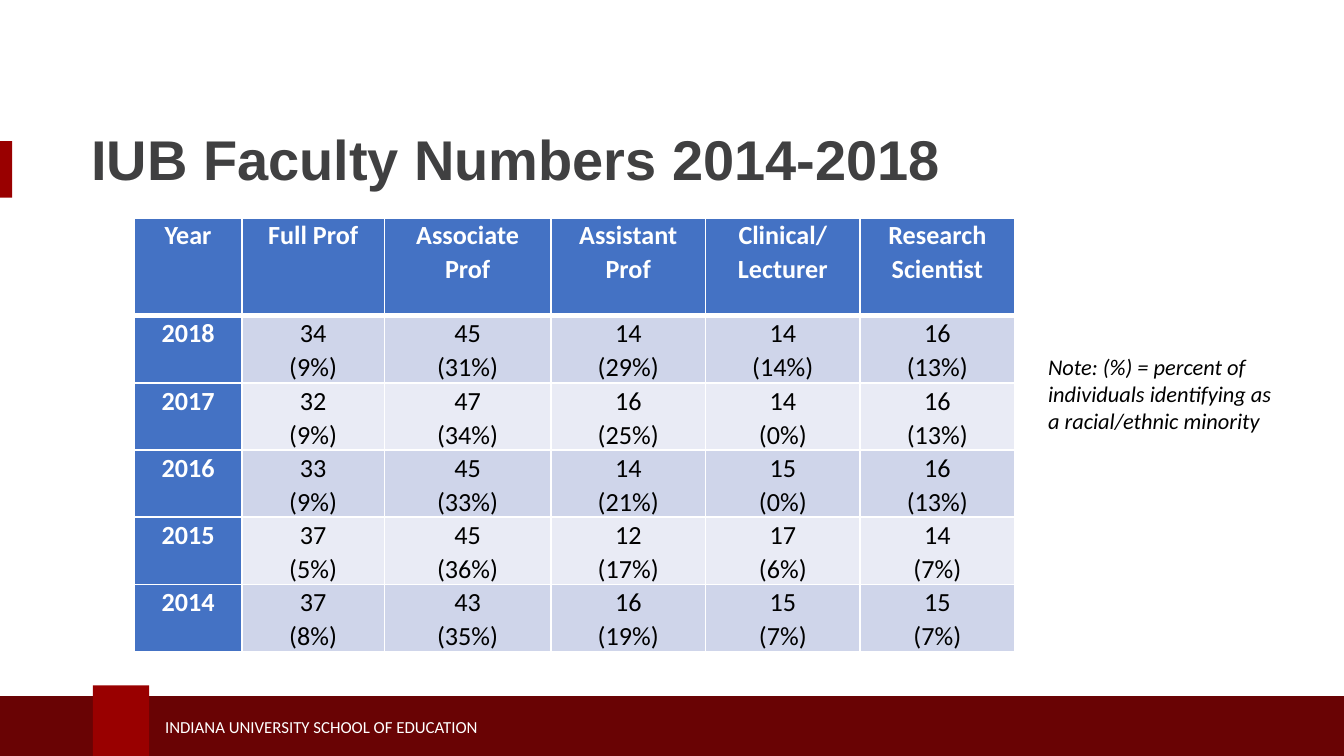
from lxml import etree
from pptx import Presentation, util as u
from pptx.dml.color import RGBColor
from pptx.enum import shapes, text
from pptx.oxml.ns import qn

WHITE = RGBColor(0xFF, 0xFF, 0xFF)
BLACK = RGBColor(0, 0, 0)
CRIMSON = RGBColor(0x99, 0x00, 0x00)
MAROON = RGBColor(0x69, 0x03, 0x04)
GRAY = RGBColor(0x40, 0x40, 0x41)
BLUE = RGBColor(0x44, 0x72, 0xC4)
BANDS = [RGBColor(0xCF, 0xD5, 0xEA), RGBColor(0xE9, 0xEB, 0xF5)]

WIDTH = u.Inches(10)
HEIGHT = WIDTH * 9 // 16
UNIT = WIDTH / 100

TITLE = dict(name="Arial", size=u.Pt(30), bold=True)
FOOTER = dict(name="Calibri", size=u.Pt(9))
NOTE = dict(name="Calibri", size=u.Pt(12), italic=True)
HEAD = dict(name="Calibri", size=u.Pt(14), bold=True)
BODY = dict(name="Calibri", size=u.Pt(14), bold=False)

COLUMNS = [8, 10.6, 12.4, 11.5, 11.5, 11.5]
ROWS = [7.3] + [4.9] * 5
HEADINGS = ["Year", "Full Prof", "Associate Prof", "Assistant Prof",
            "Clinical/ Lecturer", "Research Scientist"]
FACULTY = {
    "2018": ["34 (9%)", "45 (31%)", "14 (29%)", "14 (14%)", "16 (13%)"],
    "2017": ["32 (9%)", "47 (34%)", "16 (25%)", "14 (0%)", "16 (13%)"],
    "2016": ["33 (9%)", "45 (33%)", "14 (21%)", "15 (0%)", "16 (13%)"],
    "2015": ["37 (5%)", "45 (36%)", "12 (17%)", "17 (6%)", "14 (7%)"],
    "2014": ["37 (8%)", "43 (35%)", "16 (19%)", "15 (7%)", "15 (7%)"],
}


def grid(*cells):
    """Turn grid units into slide lengths."""
    return [u.Emu(round(c * UNIT)) for c in cells]


def write(tf, lines, style, color, **layout):
    """Fill a text frame with one formatted paragraph per line."""
    for i, line in enumerate(lines):
        p = tf.paragraphs[0] if i == 0 else tf.add_paragraph()
        for key, value in layout.items():
            setattr(p, key, value)
        r = p.add_run()
        r.text = line
        for key, value in style.items():
            setattr(r.font, key, value)
        r.font.color.rgb = color


def add_block(s, box, color):
    """Add a plain filled rectangle."""
    sp = s.shapes.add_shape(shapes.MSO_SHAPE.RECTANGLE, *grid(*box))
    sp.shadow.inherit = False
    sp.fill.solid()
    sp.fill.fore_color.rgb = color
    sp.line.fill.background()


def add_text(s, box, lines, style, color, anchor, **layout):
    """Add a wrapping text box."""
    tf = s.shapes.add_textbox(*grid(*box)).text_frame
    tf.word_wrap = True
    tf.vertical_anchor = anchor
    write(tf, lines, style, color, **layout)


def add_footer(s, x, y, w, h):
    """Place the footer band with its tab and school name."""
    add_block(s, (x, y + 0.8, w, h - 0.8), MAROON)
    add_block(s, (x + 7.2, y, 4.2, h), CRIMSON)
    add_text(s, (x + 11.6, y + 1.8, 39.5, 2.5),
             ["INDIANA UNIVERSITY SCHOOL OF EDUCATION"], FOOTER, WHITE,
             text.MSO_ANCHOR.MIDDLE)


def add_title(s, x, y, w, h):
    """Place the slide title and the accent at the slide edge."""
    add_block(s, (0, y + 2.2, 0.9, 4.2), CRIMSON)
    add_text(s, (x, y, w, h), ["IUB Faculty Numbers 2014-2018"], TITLE, GRAY,
             text.MSO_ANCHOR.MIDDLE, line_spacing=0.9)


def set_borders(cell, **widths):
    """Draw white cell borders of the given point widths."""
    tc_pr = cell._tc.get_or_add_tcPr()
    for i, (side, width) in enumerate(widths.items()):
        ln = etree.Element(qn(f"a:ln{side}"), w=str(u.Pt(width)))
        fill = etree.SubElement(ln, qn("a:solidFill"))
        etree.SubElement(fill, qn("a:srgbClr"), val=str(WHITE))
        tc_pr.insert(i, ln)


def fill_cell(cell, lines, style, color, fill):
    """Write and colour one table cell."""
    margins = dict(margin_left=0.09, margin_right=0.09, margin_top=0, margin_bottom=0)
    for key, value in margins.items():
        setattr(cell, key, u.Inches(value))
    cell.fill.solid()
    cell.fill.fore_color.rgb = fill
    write(cell.text_frame, lines, style, color,
          alignment=text.PP_ALIGN.CENTER, line_spacing=1.07)


def add_faculty_table(s, x, y):
    """Place the table of faculty counts by year and rank."""
    box = grid(x, y, sum(COLUMNS), sum(ROWS))
    table = s.shapes.add_table(len(ROWS), len(COLUMNS), *box).table
    table.first_col = True
    for column, width in zip(table.columns, grid(*COLUMNS)):
        column.width = width
    for row, height in zip(table.rows, grid(*ROWS)):
        row.height = height
    records = [HEADINGS] + [[year, *counts] for year, counts in FACULTY.items()]
    for i, record in enumerate(records):
        for j, value in enumerate(record):
            cell = table.cell(i, j)
            if i == 0 or j == 0:
                fill_cell(cell, [value], HEAD, WHITE, BLUE)
            else:
                fill_cell(cell, value.split(), BODY, BLACK, BANDS[(i - 1) % 2])
            set_borders(cell, L=1, R=1, T=3 if i == 1 else 1, B=3 if i == 0 else 1)


def add_note(s, x, y, w, h):
    """Place the note beside the table."""
    add_text(s, (x, y, w, h),
             ["Note: (%) = percent of", "individuals identifying as",
              "a racial/ethnic minority"], NOTE, BLACK, text.MSO_ANCHOR.TOP)


def main():
    """Build and save the slide."""
    prs = Presentation()
    prs.slide_width, prs.slide_height = WIDTH, HEIGHT
    s = prs.slides.add_slide(prs.slide_layouts[6])
    add_footer(s, -0.3, 51, 100.9, 5.8)
    add_title(s, 5.8, 8.3, 87.5, 7.6)
    add_faculty_table(s, 10, 16.2)
    add_note(s, 77, 25.8, 22, 10.1)
    prs.save("out.pptx")


if __name__ == "__main__":
    main()
